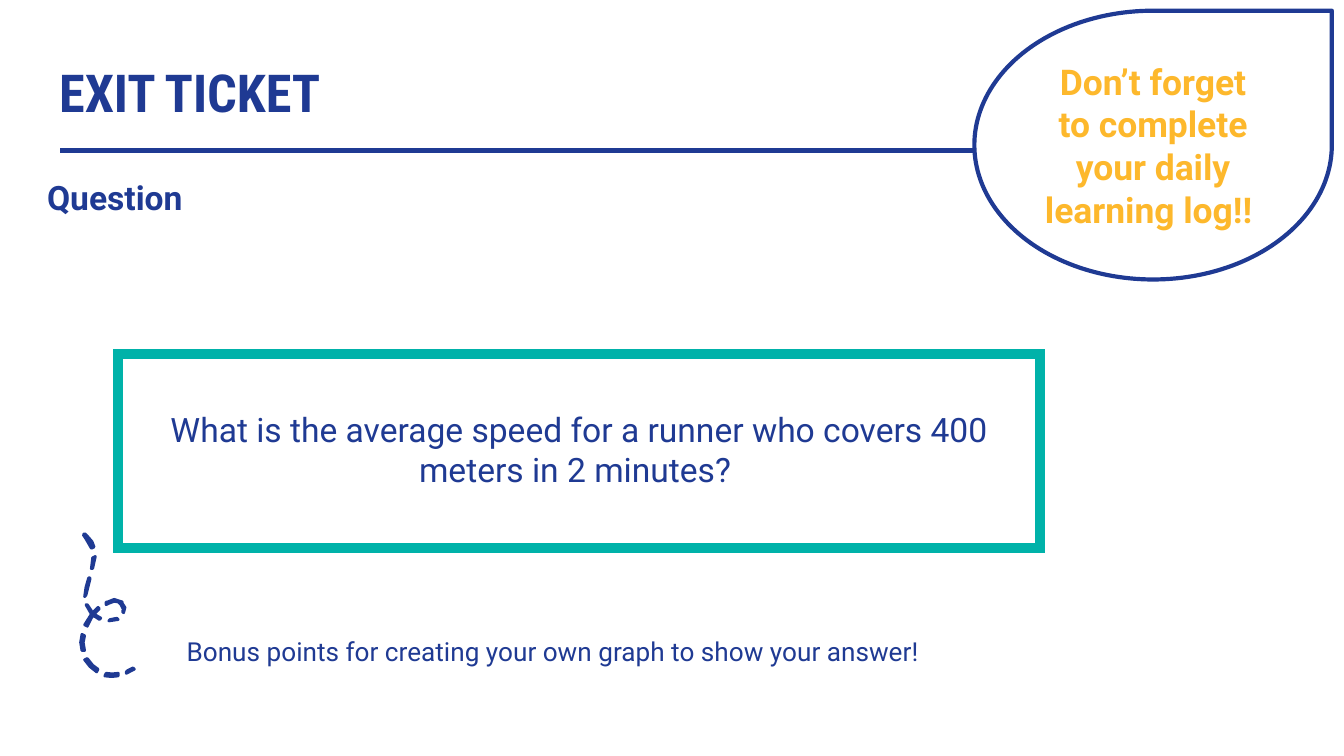
"""Build the exit ticket slide with its question, bonus note and reminder."""
from dataclasses import dataclass

from lxml.etree import SubElement
from pptx import Presentation
from pptx.dml.color import RGBColor
from pptx.enum.shapes import MSO_CONNECTOR, MSO_SHAPE
from pptx.enum.text import MSO_ANCHOR, MSO_AUTO_SIZE, PP_ALIGN
from pptx.oxml import parse_xml
from pptx.oxml.ns import nsdecls, qn
from pptx.util import Inches, Pt

NAVY = RGBColor(0x1F, 0x3A, 0x93)
TEAL = RGBColor(0x00, 0xB2, 0xA9)
AMBER = RGBColor(0xFD, 0xB8, 0x2C)
WHITE = RGBColor(0xFF, 0xFF, 0xFF)

SLIDE_WIDTH = Inches(10)
SLIDE_HEIGHT = SLIDE_WIDTH * 9 // 16
CELL = SLIDE_WIDTH / 100
MARGINS = {f"margin_{side}": Inches(0.1) for side in ("left", "top", "right", "bottom")}


@dataclass(frozen=True)
class Area:
    """A rectangle in columns and rows of the slide grid."""
    column: float
    row: float
    columns: float
    rows: float

    def box(self) -> tuple[int, ...]:
        """Return left, top, width and height in slide units."""
        return to_units((self.column, self.row, self.columns, self.rows))


@dataclass(frozen=True)
class Label:
    """A text with its format."""
    text: str
    size: float
    bold: bool = False
    name: str = "Roboto"
    color: RGBColor = NAVY
    alignment: PP_ALIGN = PP_ALIGN.LEFT


@dataclass(frozen=True)
class Dash:
    """One inked dash of the loop, as outline points on the grid."""
    points: tuple[tuple[float, float], ...]


TITLE = Label("EXIT TICKET", 28, True, "Roboto Condensed")
HEADING = Label("Question", 18, True)
QUESTION = Label("What is the average speed for a runner who covers 400 meters in 2 minutes? ",
                 18, alignment=PP_ALIGN.CENTER)
BONUS = Label("Bonus points for creating your own graph to show your answer!", 14)
REMINDER = Label("Don’t forget to complete your daily learning log!! ", 19, True,
                 color=AMBER, alignment=PP_ALIGN.CENTER)

DASHES = (
    Dash(((9.9, 49.7), (10, 49.8), (9.4, 50.1), (9.4, 50), (9.5, 49.9))),
    Dash(((8.8, 50.1), (8.8, 50.3), (8.3, 50.35), (7.8, 50.3), (7.9, 50.1), (8.35, 50.15))),
    Dash(((6.5, 49), (6.9, 49.5), (7.3, 49.8), (7.2, 50), (6.7, 49.6), (6.3, 49.1))),
    Dash(((6.3, 47.3), (6.2, 47.8), (6.3, 48.4), (6.1, 48.4), (6, 47.8), (6.1, 47.2))),
    Dash(((9.1, 44.9), (9.3, 45.2), (9.2, 45.6), (9.1, 45.5), (9.2, 45.4), (9, 45),
          (8.8, 44.8), (8.5, 44.75), (8.1, 44.9), (7.9, 45), (7.9, 44.8), (8, 44.8),
          (8.5, 44.6), (9.1, 44.8))),
    Dash(((8.8, 46.1), (8.1, 46.2), (8.2, 46.1), (8.7, 46))),
    Dash(((7.1, 41.4), (6.9, 42.3), (6.8, 42.3), (6.9, 41.5))),
    Dash(((6.5, 39.9), (6.85, 40.3), (7, 40.7), (6.8, 40.8), (6.4, 40.1), (6.2, 39.8), (6.3, 39.7))),
    Dash(((6.7, 43), (6.7, 43.1), (6.4, 44.3), (6.3, 44.4), (6.4, 43.7), (6.6, 43))),
    Dash(((7.3, 45.2), (7.4, 45.3), (7, 45.7), (7.5, 46), (7.4, 46.1), (7.1, 45.9),
          (6.9, 45.8), (6.5, 46.6), (6.3, 46.5), (6.8, 45.7), (6.4, 45), (6.5, 45),
          (6.9, 45.6))),
)


def to_units(values: tuple[float, ...]) -> tuple[int, ...]:
    """Turn grid lengths into slide units."""
    return tuple(round(value * CELL) for value in values)


def apply(target, values: dict) -> None:
    """Set every named attribute on the target."""
    for name, value in values.items():
        setattr(target, name, value)


def write(text_frame, label: Label):
    """Write one formatted paragraph and return it."""
    paragraph = text_frame.paragraphs[0]
    paragraph.alignment = label.alignment
    run = paragraph.add_run()
    run.text = label.text
    apply(run.font, {"size": Pt(label.size), "bold": label.bold, "name": label.name})
    run.font.color.rgb = label.color
    return paragraph


def fill_text(shape, label: Label, anchor=MSO_ANCHOR.TOP):
    """Set up the shape's text frame and write the label."""
    apply(shape.text_frame, {"word_wrap": True, "auto_size": MSO_AUTO_SIZE.NONE,
                             "vertical_anchor": anchor, **MARGINS})
    return write(shape.text_frame, label)


def fill_placeholder(shape, area: Area, label: Label):
    """Move a placeholder and write its label."""
    apply(shape, dict(zip(("left", "top", "width", "height"), area.box())))
    return fill_text(shape, label)


def paint(shape, fill: RGBColor, width: float) -> None:
    """Give a shape a solid fill and a navy outline."""
    shape.shadow.inherit = False
    shape.fill.solid()
    shape.fill.fore_color.rgb = fill
    shape.line.color.rgb = NAVY
    shape.line.width = Pt(width)


def add_rule(slide, area: Area) -> None:
    """Draw the line under the title."""
    left, top, width, height = area.box()
    rule = slide.shapes.add_connector(MSO_CONNECTOR.STRAIGHT, left, top, left + width, top + height)
    rule.line.color.rgb = NAVY
    rule.line.width = Pt(2.25)
    SubElement(rule._element.spPr, qn("a:effectLst"))


def add_question(slide, area: Area, label: Label) -> None:
    """Draw the one-cell table with a teal border."""
    table = slide.shapes.add_table(1, 1, *area.box()).table
    apply(table, {"first_row": False, "horz_banding": False})
    cell = table.cell(0, 0)
    apply(cell, {"vertical_anchor": MSO_ANCHOR.MIDDLE, **MARGINS})
    cell.fill.solid()
    cell.fill.fore_color.rgb = WHITE
    properties = cell._tc.get_or_add_tcPr()
    for index, side in enumerate("LRTB"):
        properties.insert(index, parse_xml(
            f'<a:ln{side} {nsdecls("a")} w="{Pt(6)}"><a:solidFill>'
            f'<a:srgbClr val="{TEAL}"/></a:solidFill></a:ln{side}>'))
    write(cell.text_frame, label)


def add_dash(slide, dash: Dash) -> None:
    """Draw one dash of the loop."""
    start, *others = map(to_units, dash.points)
    builder = slide.shapes.build_freeform(*start)
    builder.add_line_segments(others, close=True)
    paint(builder.convert_to_shape(), NAVY, 1.5)


def main() -> None:
    """Build and save the presentation."""
    presentation = Presentation()
    apply(presentation, {"slide_width": SLIDE_WIDTH, "slide_height": SLIDE_HEIGHT})
    slide = presentation.slides.add_slide(presentation.slide_layouts[1])

    fill_placeholder(slide.shapes.title, Area(3.4, 3.5, 93.2, 6.3), TITLE)
    add_rule(slide, Area(4.5, 11.2, 90.5, 0))
    add_question(slide, Area(8.8, 26.35, 68.6, 14.4), QUESTION)

    heading = fill_placeholder(slide.placeholders[1], Area(2.5, 11.7, 81.2, 5.2), HEADING)
    apply(heading, {"line_spacing": 1.15, "space_before": Pt(0), "space_after": Pt(16)})
    properties = heading._p.get_or_add_pPr()
    properties.set("marL", "0")
    properties.set("indent", "0")
    SubElement(properties, qn("a:buNone"))

    fill_text(slide.shapes.add_textbox(*Area(12.9, 46.3, 60.4, 4.4).box()), BONUS)
    for dash in DASHES:
        add_dash(slide, dash)

    reminder = slide.shapes.add_shape(MSO_SHAPE.TEAR, *Area(72.5, 0.8, 26.6, 20).box())
    paint(reminder, WHITE, 2.25)
    fill_text(reminder, REMINDER, MSO_ANCHOR.MIDDLE)
    presentation.save("out.pptx")


if __name__ == "__main__":
    main()
